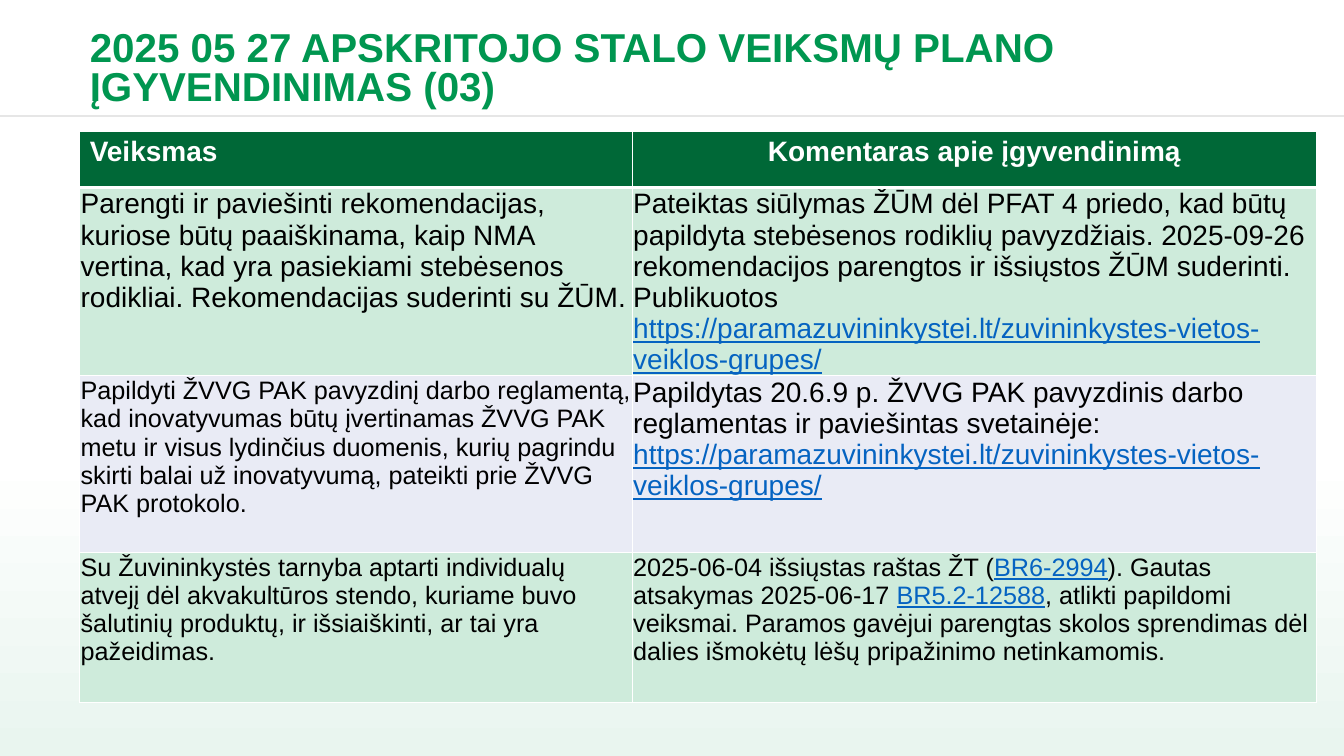
import dataclasses

import pptx
import pptx.dml.color
import pptx.enum.shapes
import pptx.enum.text
import pptx.oxml
import pptx.oxml.ns
import pptx.util

Inches = pptx.util.Inches
Pt = pptx.util.Pt
Align = pptx.enum.text.PP_ALIGN
WIDE, HIGH = 13.33, 7.5
WHITE, BLACK, LINK = "FFFFFF", "000000", "0563C1"
MINT, LILAC, GREEN = "CEEBDB", "E9EBF5", "006837"
SITE = "https://paramazuvininkystei.lt/zuvininkystes-vietos-veiklos-grupes/"


@dataclasses.dataclass
class Cell:
    text: str
    size: float = 18
    color: str = BLACK
    bold: bool = False
    align: Align = Align.LEFT


@dataclasses.dataclass
class Row:
    height: float
    fill: str
    cells: tuple[Cell, Cell]
    inset: bool = True
    base: float = 1


ROWS = [
    Row(0.56, GREEN, (
        Cell("Veiksmas", 20, WHITE, True),
        Cell("Komentaras apie įgyvendinimą", 20, WHITE, True, Align.CENTER),
    ), inset=False, base=3),
    Row(1.79, MINT, (
        Cell("Parengti ir paviešinti rekomendacijas, kuriose būtų paaiškinama, "
             "kaip NMA vertina, kad yra pasiekiami stebėsenos rodikliai. "
             "Rekomendacijas suderinti su ŽŪM.", 20),
        Cell("Pateiktas siūlymas ŽŪM dėl PFAT 4 priedo, kad būtų papildyta "
             "stebėsenos rodiklių pavyzdžiais. 2025-09-26 rekomendacijos "
             f"parengtos ir išsiųstos ŽŪM suderinti. Publikuotos |{SITE}|", 20),
    )),
    Row(1.75, LILAC, (
        Cell("Papildyti ŽVVG PAK pavyzdinį darbo reglamentą, kad inovatyvumas "
             "būtų įvertinamas ŽVVG PAK metu ir visus lydinčius duomenis, kurių "
             "pagrindu skirti balai už inovatyvumą, pateikti prie ŽVVG PAK protokolo."),
        Cell("Papildytas 20.6.9 p. ŽVVG PAK pavyzdinis darbo reglamentas ir "
             f"paviešintas svetainėje: |{SITE}|", 20),
    )),
    Row(1.49, MINT, (
        Cell("Su Žuvininkystės tarnyba aptarti individualų atvejį dėl akvakultūros "
             "stendo, kuriame buvo šalutinių produktų, ir išsiaiškinti, ar tai yra "
             "pažeidimas."),
        Cell("2025-06-04 išsiųstas raštas ŽT (|BR6-2994|). Gautas atsakymas "
             "2025-06-17 |BR5.2-12588|, atlikti papildomi veiksmai. Paramos gavėjui "
             "parengtas skolos sprendimas dėl dalies išmokėtų lėšų pripažinimo "
             "netinkamomis."),
    )),
]


def paint(target, color: str) -> None:
    target.rgb = pptx.dml.color.RGBColor.from_string(color)


def write(frame, text: str, *, size: float, color: str = BLACK, bold: bool = False,
          align: Align = Align.LEFT, space: float = 1) -> None:
    para = frame.paragraphs[0]
    para.alignment = align
    para.line_spacing = space
    for spot, part in enumerate(text.split("|")):
        if part:
            link = spot % 2 == 1
            run = para.add_run()
            run.text = part
            run.font.name = "Arial"
            run.font.size = Pt(size)
            run.font.bold = bold
            run.font.underline = link
            paint(run.font.color, LINK if link else color)


def edge(cell, base: float) -> None:
    props = cell._tc.get_or_add_tcPr()
    space = pptx.oxml.ns.nsdecls("a")
    for spot, side in enumerate("LRTB"):
        width = Pt(base if side == "B" else 1)
        props.insert(spot, pptx.oxml.parse_xml(
            f'<a:ln{side} {space} w="{width}"><a:solidFill>'
            f'<a:srgbClr val="{WHITE}"/></a:solidFill></a:ln{side}>'))


def back(slide) -> None:
    rect = slide.shapes.add_shape(
        pptx.enum.shapes.MSO_SHAPE.RECTANGLE, 0, 0, Inches(WIDE), Inches(HIGH))
    rect.shadow.inherit = False
    rect.line.fill.background()
    rect.fill.gradient()
    rect.fill.gradient_angle = 90
    for stop, place, color in zip(rect.fill.gradient_stops, (0, 0.4), ("E9F5EF", WHITE)):
        stop.position = place
        paint(stop.color, color)
    rule = slide.shapes.add_connector(
        pptx.enum.shapes.MSO_CONNECTOR.STRAIGHT,
        0, Inches(1.15), Inches(WIDE), Inches(1.15))
    rule.line.width = Pt(1)
    paint(rule.line.color, "E6E6E6")
    pptx.oxml.ns.qn("a:effectLst")
    rule.element.spPr.append(
        pptx.oxml.parse_xml(f'<a:effectLst {pptx.oxml.ns.nsdecls("a")}/>'))


def head(slide) -> None:
    title = slide.shapes.title
    title.left, title.top = Inches(0.79), Inches(0.24)
    title.width, title.height = Inches(10.68), Inches(0.92)
    frame = title.text_frame
    frame.word_wrap = True
    frame.auto_size = pptx.enum.text.MSO_AUTO_SIZE.NONE
    frame.vertical_anchor = pptx.enum.text.MSO_ANCHOR.MIDDLE
    write(frame, "2025 05 27 APSKRITOJO STALO VEIKSMŲ PLANO ĮGYVENDINIMAS (03)",
          size=28.8, color="009650", bold=True, space=0.8)
    title.element.getparent().append(title.element)


def grid(slide, rows: list[Row]) -> None:
    widths = (5.48, 6.79)
    table = slide.shapes.add_table(
        len(rows), len(widths), Inches(0.79), Inches(1.3),
        Inches(sum(widths)), Inches(sum(row.height for row in rows))).table
    table.horz_banding = False
    for column, width in zip(table.columns, widths):
        column.width = Inches(width)
    for down, row in enumerate(rows):
        table.rows[down].height = Inches(row.height)
        for across, item in enumerate(row.cells):
            cell = table.cell(down, across)
            cell.fill.solid()
            paint(cell.fill.fore_color, row.fill)
            edge(cell, row.base)
            if row.inset:
                cell.margin_left = cell.margin_right = cell.margin_top = Inches(0.01)
                cell.margin_bottom = 0
            write(cell.text_frame, item.text, size=item.size, color=item.color,
                  bold=item.bold, align=item.align)


def main() -> None:
    deck = pptx.Presentation()
    deck.slide_width, deck.slide_height = Inches(WIDE), Inches(HIGH)
    slide = deck.slides.add_slide(deck.slide_layouts[5])
    back(slide)
    head(slide)
    grid(slide, ROWS)
    deck.save("out.pptx")


if __name__ == "__main__":
    main()
